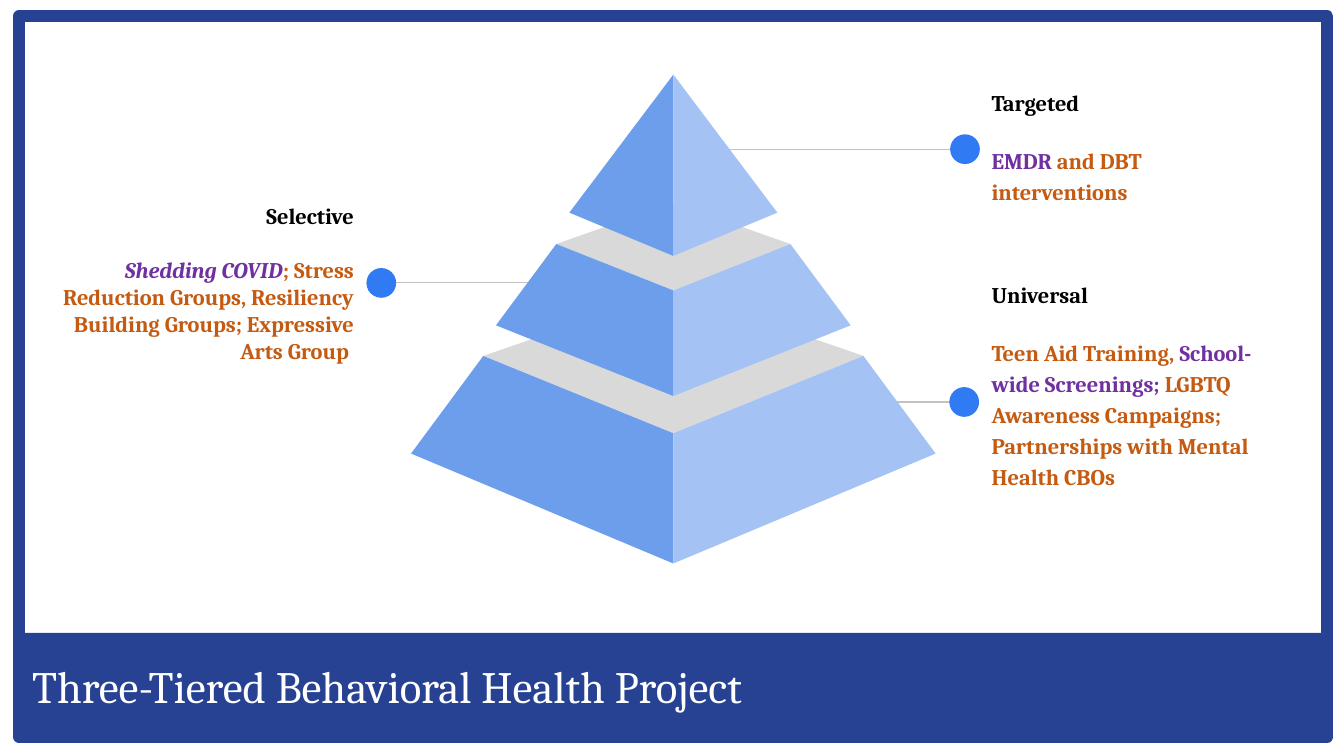
from dataclasses import dataclass

from lxml import etree
from pptx import Presentation
from pptx.dml.color import RGBColor
from pptx.enum import shapes, text
from pptx.oxml import ns
from pptx.util import Cm, Pt


@dataclass(frozen=True)
class Theme:
    navy: str = "274292"
    white: str = "FFFFFF"
    black: str = "000000"
    dot: str = "307BF3"
    leader: str = "C2C2C2"
    lid: str = "D9D9D9"
    left_face: str = "6D9EEB"
    right_face: str = "A4C2F4"
    orange: str = "C55A11"
    purple: str = "7030A0"
    font: str = "Cambria"
    title_size: float = 32
    label_size: float = 16
    label_gap: float = 19.3
    frame_width: float = 8.5
    leader_width: float = 0.75


@dataclass(frozen=True)
class Tier:
    back: float
    shoulder_half: float
    shoulder: float
    front: float
    base_half: float
    base: float
    tip: float


@dataclass(frozen=True)
class Callout:
    box: tuple
    dot: tuple
    leader_end: float
    heading: str
    detail: tuple
    align: text.PP_ALIGN = text.PP_ALIGN.LEFT
    spacing: float = 1.15


THEME = Theme()

TIERS = (
    Tier(5.44, 4.79, 7.09, 9.04, 6.61, 9.55, 12.32),
    Tier(3.23, 2.95, 4.27, 5.44, 4.47, 6.32, 8.1),
    Tier(0, 0, 0, 0, 2.62, 3.48, 4.57),
)

CALLOUTS = (
    Callout((24.74, 7.1, 7.87, 5.23), (24.3, 10.13), 22.48, "Universal", (
        ("Teen Aid Training, ", THEME.orange, False),
        ("School-wide Screenings;", THEME.purple, False),
        (" LGBTQ Awareness Campaigns; Partnerships with Mental Health CBOs",
         THEME.orange, False))),
    Callout((1.32, 4.52, 7.85, 5.23), (9.61, 7.13), 13.41, "Selective", (
        ("Shedding COVID", THEME.purple, True),
        ("; Stress Reduction Groups, Resiliency Building Groups; "
         "Expressive Arts Group ", THEME.orange, False)),
        text.PP_ALIGN.RIGHT, 1.0),
    Callout((24.74, 1.1, 7.04, 5.23), (24.32, 3.76), 18.24, "Targeted", (
        ("EMDR", THEME.purple, False),
        (" and DBT interventions", THEME.orange, False))),
)


def rgb(color):
    return RGBColor.from_string(color)


def paint(shape, color):
    shape.shadow.inherit = False
    shape.fill.solid()
    shape.fill.fore_color.rgb = rgb(color)
    shape.line.fill.background()


def set_margins(frame, inset):
    frame.margin_left = frame.margin_right = Cm(inset)
    frame.margin_top = frame.margin_bottom = Cm(inset)
    frame.vertical_anchor = text.MSO_ANCHOR.MIDDLE
    frame.word_wrap = True


def set_font(font, size, bold=False):
    font.name = THEME.font
    font.size = Pt(size)
    font.bold = bold


def add_polygon(slide, points, color):
    corners = [(Cm(x), Cm(y)) for x, y in points]
    builder = slide.shapes.build_freeform(*corners[0])
    builder.add_line_segments(corners[1:], close=True)
    paint(builder.convert_to_shape(), color)


def add_pyramid(slide, left, top, width):
    axis = left + width / 2
    for tier in TIERS:
        def corner(half, y):
            return axis + half, top + y

        front = corner(0, tier.front)
        if tier.shoulder_half:
            add_polygon(slide, (
                corner(-tier.shoulder_half, tier.shoulder), front,
                corner(tier.shoulder_half, tier.shoulder),
                corner(0, tier.back)), THEME.lid)
        for side, color in ((-1, THEME.left_face), (1, THEME.right_face)):
            add_polygon(slide, (
                front, corner(side * tier.shoulder_half, tier.shoulder),
                corner(side * tier.base_half, tier.base),
                corner(0, tier.tip)), color)


def add_callout(slide, callout):
    dot_x, dot_y = callout.dot
    leader = slide.shapes.add_connector(
        shapes.MSO_CONNECTOR.STRAIGHT, Cm(callout.leader_end), Cm(dot_y),
        Cm(dot_x), Cm(dot_y))
    leader.line.color.rgb = rgb(THEME.leader)
    leader.line.width = Pt(THEME.leader_width)
    etree.SubElement(leader._element.spPr, ns.qn("a:effectLst"))

    diameter = 0.75
    dot = slide.shapes.add_shape(
        shapes.MSO_SHAPE.OVAL, Cm(dot_x - diameter / 2),
        Cm(dot_y - diameter / 2), Cm(diameter), Cm(diameter))
    paint(dot, THEME.dot)

    label = slide.shapes.add_textbox(*map(Cm, callout.box)).text_frame
    set_margins(label, 0.25)
    heading = label.paragraphs[0]
    heading.text = callout.heading
    detail = label.add_paragraph()
    detail.space_before = Pt(THEME.label_gap)
    detail.line_spacing = callout.spacing
    for wording, color, italic in callout.detail:
        run = detail.add_run()
        run.text = wording
        run.font.color.rgb = rgb(color)
        run.font.italic = italic
    for paragraph in (heading, detail):
        paragraph.alignment = callout.align
        set_font(paragraph.font, THEME.label_size, bold=True)
    heading.font.color.rgb = rgb(THEME.black)


def add_title_band(slide, left, top, width, height):
    band = slide.shapes.add_shape(
        shapes.MSO_SHAPE.RECTANGLE, Cm(left), Cm(top), Cm(width), Cm(height))
    paint(band, THEME.navy)
    set_margins(band.text_frame, 0.33)
    title = band.text_frame.paragraphs[0]
    title.text = "Three-Tiered Behavioral Health Project"
    title.alignment = text.PP_ALIGN.LEFT
    set_font(title.font, THEME.title_size)
    title.font.color.rgb = rgb(THEME.white)


def add_border(slide, left, top, width, height):
    border = slide.shapes.add_shape(
        shapes.MSO_SHAPE.RECTANGLE, Cm(left), Cm(top), Cm(width), Cm(height))
    border.shadow.inherit = False
    border.fill.background()
    border.line.color.rgb = rgb(THEME.navy)
    border.line.width = Pt(THEME.frame_width)


def main():
    deck = Presentation()
    deck.slide_width, deck.slide_height = Cm(33.87), Cm(19.05)
    slide = deck.slides.add_slide(deck.slide_layouts[6])
    for callout in CALLOUTS:
        add_callout(slide, callout)
    add_pyramid(slide, 10.36, 1.88, 13.22)
    add_title_band(slide, 0.48, 15.95, 32.97, 2.67)
    add_border(slide, 0.48, 0.41, 32.97, 18.16)
    deck.save("out.pptx")


if __name__ == "__main__":
    main()
